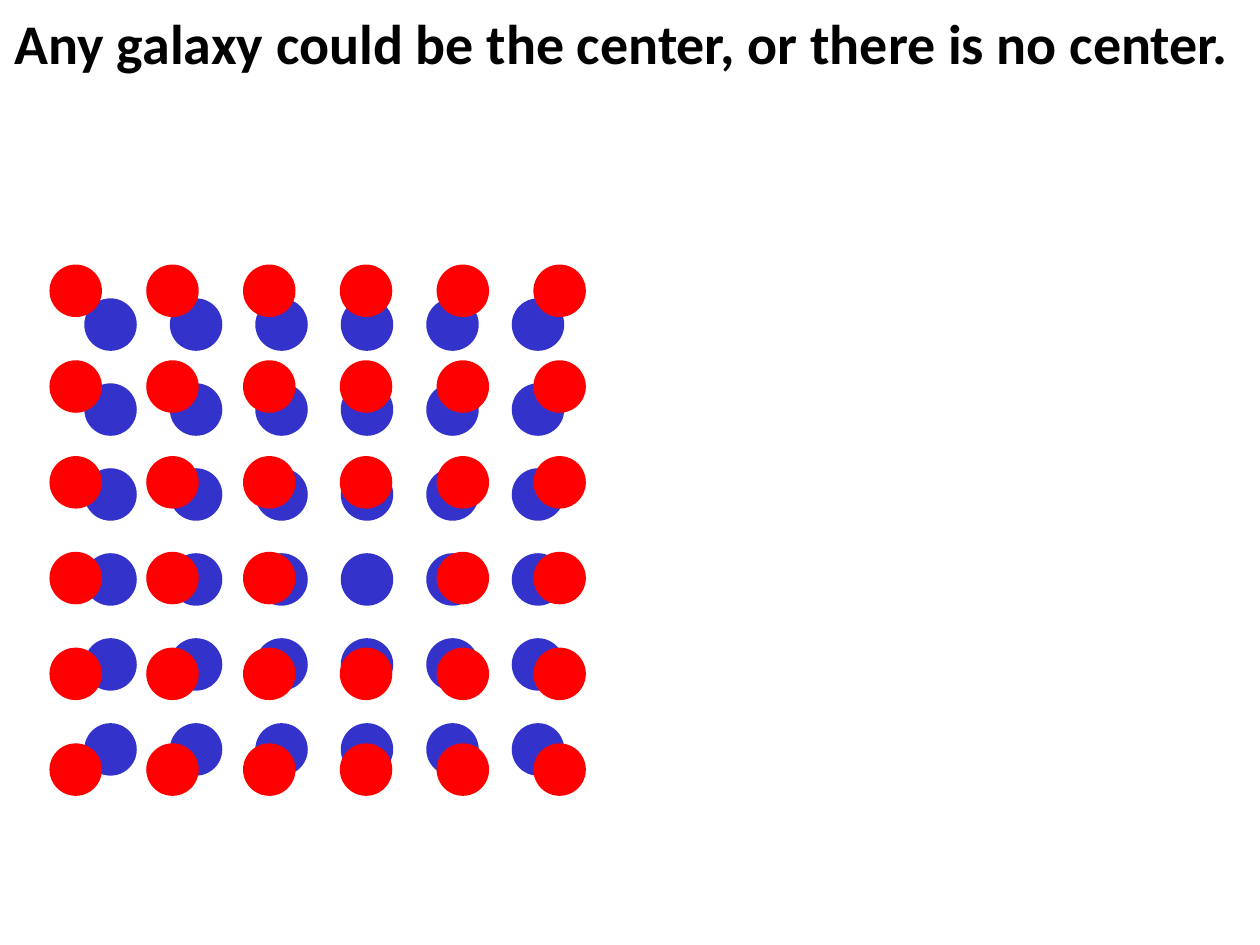
from dataclasses import dataclass

from pptx import Presentation
from pptx.dml.color import RGBColor
from pptx.enum.shapes import MSO_SHAPE
from pptx.enum.text import MSO_AUTO_SIZE
from pptx.util import Pt

OVAL = MSO_SHAPE.OVAL
GROW = MSO_AUTO_SIZE.SHAPE_TO_FIT_TEXT


@dataclass(frozen=True)
class Theme:
    before: RGBColor = RGBColor(0x33, 0x33, 0xCC)
    after: RGBColor = RGBColor(0xFF, 0x00, 0x00)
    text: RGBColor = RGBColor(0x00, 0x00, 0x00)
    font: str = "Calibri"
    title_size: int = 32


class Deck:
    """Holds the theme and the current slide."""

    def __init__(self, slide, theme):
        self.s = slide
        self.theme = theme

    def title(self, text, left, top, width, height):
        tf = self.s.shapes.add_textbox(Pt(left), Pt(top), Pt(width), Pt(height)).text_frame
        tf.word_wrap = True
        tf.auto_size = GROW
        p = tf.paragraphs[0]
        p.text = text
        p.font.name = self.theme.font
        p.font.size = Pt(self.theme.title_size)
        p.font.bold = True
        p.font.color.rgb = self.theme.text

    def galaxies(self, left, top, dx, dy, color, count=6, size=30, skip=()):
        """Draw a grouped square grid of dots, leaving out (column, row) cells in skip."""
        group = self.s.shapes.add_group_shape()
        for row in range(count):
            for col in range(count):
                if (col, row) in skip:
                    continue
                sp = group.shapes.add_shape(
                    OVAL, Pt(left + col * dx), Pt(top + row * dy), Pt(size), Pt(size))
                sp.shadow.inherit = False
                sp.fill.solid()
                sp.fill.fore_color.rgb = color
                sp.line.fill.background()


def main():
    prs = Presentation()
    prs.slide_width, prs.slide_height = Pt(720), Pt(540)
    theme = Theme()
    deck = Deck(prs.slides.add_slide(prs.slide_layouts[6]), theme)

    # Galaxies before expansion
    deck.galaxies(48.2, 170.5, 48.85, 48.55, theme.before)

    # Galaxies after expansion, with the chosen center left open
    deck.galaxies(28.3, 151.2, 55.3, 54.72, theme.after, skip={(3, 3)})

    # Title
    deck.title("Any galaxy could be the center, or there is no center.",
               1.4, 1.4, 718.6, 46)

    prs.save("out.pptx")


if __name__ == "__main__":
    main()
